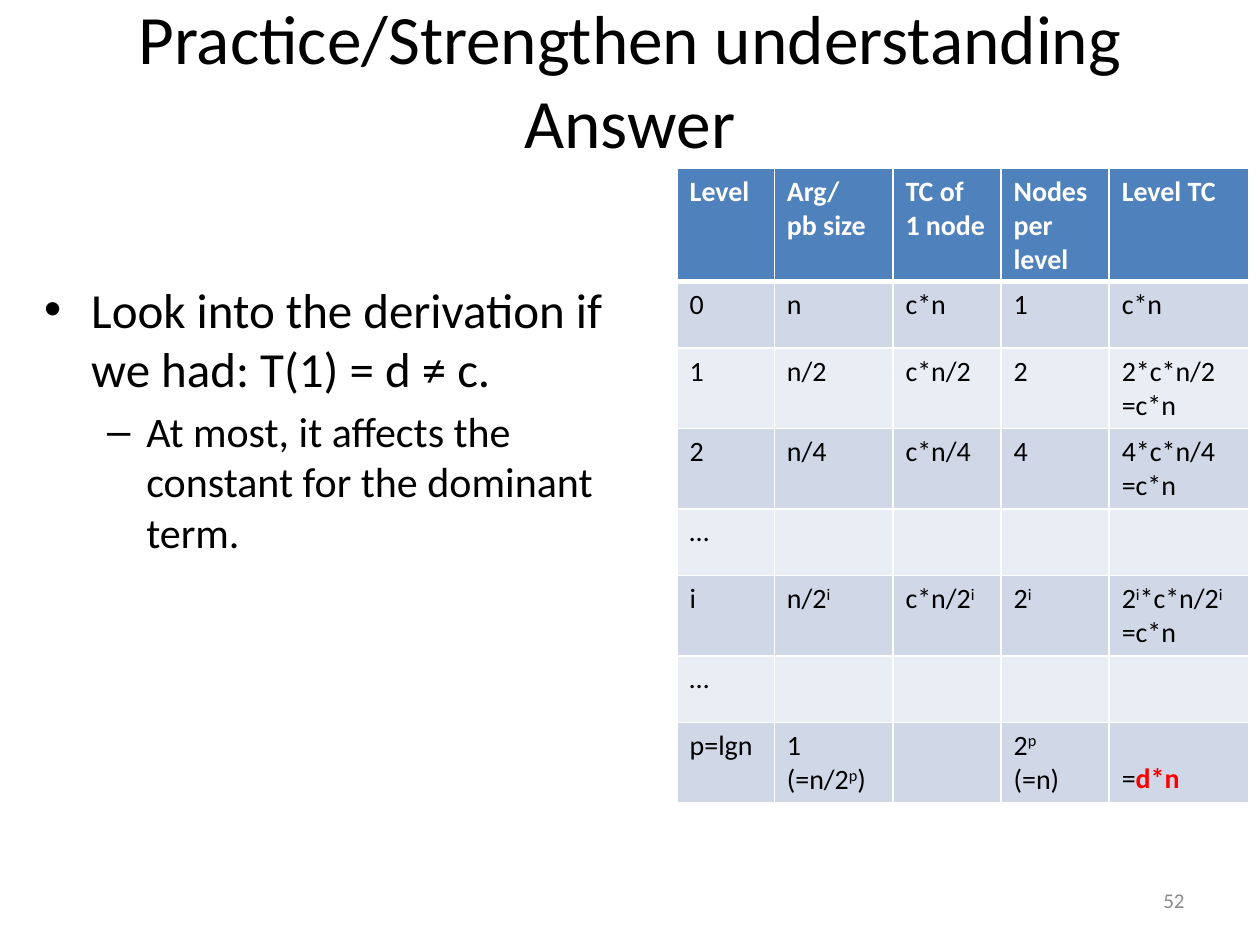
from dataclasses import dataclass
from itertools import cycle

from lxml.etree import SubElement
from pptx import Presentation
from pptx.dml.color import RGBColor
from pptx.enum.text import MSO_ANCHOR, PP_ALIGN
from pptx.oxml.ns import qn
from pptx.util import Cm, Pt

FONT = "Calibri"
BLACK, WHITE, RED, GRAY = "000000", "FFFFFF", "FF0000", "8C8C8C"
BLUE, DARK, LIGHT = "4F81BD", "D0D8E8", "E9EDF4"


@dataclass(frozen=True)
class Style:
    size: float
    color: str = BLACK
    bold: bool = False


@dataclass(frozen=True)
class Box:
    left: float
    top: float
    width: float
    height: float
    anchor: MSO_ANCHOR = MSO_ANCHOR.TOP


@dataclass(frozen=True)
class Point:
    text: str
    size: float
    mark: str
    left: float
    hang: float
    gap: float


@dataclass(frozen=True)
class Row:
    height: float
    cells: tuple[str, ...]


HEAD = Style(16, WHITE, True)
BODY = Style(16)
HOT = Style(16, RED, True)

POINTS = (
    Point("Look into the derivation if we had: T(1) = d ≠ c.", 28, "•", 0.95, 0.95, 0),
    Point("At most, it affects the constant for the dominant term.", 24, "–", 2.06, 0.79, 4.8),
)
WIDTHS = (1.96, 2.39, 2.18, 2.18, 2.82)
ROWS = (
    Row(2.29, ("Level", "Arg/\npb size", "TC of\n1 node", "Nodes per level", "Level TC")),
    Row(1.34, ("0", "n", "c*n", "1", "c*n")),
    Row(1.62, ("1", "n/2", "c*n/2", "2", "2*c*n/2\n=c*n")),
    Row(1.62, ("2", "n/4", "c*n/4", "4", "4*c*n/4\n=c*n")),
    Row(1.34, ("…", "", "", "", "")),
    Row(1.62, ("i", "n/2^i^", "c*n/2^i^", "2^i^", "2^i^*c*n/2^i^\n=c*n")),
    Row(1.34, ("…", "", "", "", "")),
    Row(1.62, ("p=lgn", "1\n(=n/2^p^)", "", "2^p^\n(=n)", "=")),
)


def tint(code: str) -> RGBColor:
    return RGBColor.from_string(code)


def add_run(para, text: str, style: Style, raised: bool = False) -> None:
    run = para.add_run()
    run.text = text
    font = run.font
    font.name, font.size, font.bold = FONT, Pt(style.size), style.bold
    font.color.rgb = tint(style.color)
    if raised:
        run._r.get_or_add_rPr().set("baseline", "30000")


def add_box(slide, box: Box):
    shape = slide.shapes.add_textbox(Cm(box.left), Cm(box.top), Cm(box.width), Cm(box.height))
    frame = shape.text_frame
    frame.word_wrap = True
    frame.vertical_anchor = box.anchor
    return frame


def add_point(para, point: Point) -> None:
    para.space_before = Pt(point.gap)
    props = para._p.get_or_add_pPr()
    props.set("marL", str(Cm(point.left)))
    props.set("indent", str(-Cm(point.hang)))
    SubElement(props, qn("a:buFont"), typeface="Arial")
    SubElement(props, qn("a:buChar"), char=point.mark)
    add_run(para, point.text, Style(point.size))


def add_edge(cell, side: str, width: float) -> None:
    line = SubElement(cell._tc.get_or_add_tcPr(), qn(f"a:ln{side}"), w=str(Pt(width)))
    fill = SubElement(line, qn("a:solidFill"))
    SubElement(fill, qn("a:srgbClr"), val=WHITE)


def fill_cell(cell, text: str, style: Style, back: str, edges: dict[str, float]) -> None:
    for side, width in edges.items():
        add_edge(cell, side, width)
    cell.fill.solid()
    cell.fill.fore_color.rgb = tint(back)
    frame = cell.text_frame
    for num, line in enumerate(text.split("\n")):
        para = frame.add_paragraph() if num else frame.paragraphs[0]
        for part, piece in enumerate(line.split("^")):
            if piece:
                add_run(para, piece, style, part % 2 == 1)


def add_grid(slide) -> None:
    total = sum(row.height for row in ROWS)
    grid = slide.shapes.add_table(
        len(ROWS), len(WIDTHS), Cm(13.65), Cm(3.39), Cm(sum(WIDTHS)), Cm(total)
    ).table
    for col, width in zip(grid.columns, WIDTHS):
        col.width = Cm(width)
    bands = cycle((DARK, LIGHT))
    for num, row in enumerate(ROWS):
        grid.rows[num].height = Cm(row.height)
        style, back = (BODY, next(bands)) if num else (HEAD, BLUE)
        edges = {"L": 1, "R": 1, "T": 3 if num == 1 else 1, "B": 1 if num else 3}
        for col, text in enumerate(row.cells):
            fill_cell(grid.cell(num, col), text, style, back, edges)
    last = grid.cell(len(ROWS) - 1, len(WIDTHS) - 1)
    last.vertical_anchor = MSO_ANCHOR.BOTTOM
    add_run(last.text_frame.paragraphs[0], "d*n", HOT)


def main() -> None:
    deck = Presentation()
    deck.slide_width, deck.slide_height = Cm(25.4), Cm(19.05)
    slide = deck.slides.add_slide(deck.slide_layouts[6])

    title = add_box(slide, Box(1.27, 0, 22.86, 3.18, MSO_ANCHOR.MIDDLE)).paragraphs[0]
    title.alignment = PP_ALIGN.CENTER
    add_run(title, "Practice/Strengthen understanding", Style(39.6))
    title.add_line_break()
    add_run(title, "Answer", Style(39.6))

    frame = add_box(slide, Box(0.64, 5.51, 12.5, 6.15))
    for num, point in enumerate(POINTS):
        add_point(frame.add_paragraph() if num else frame.paragraphs[0], point)

    page = add_box(slide, Box(18.2, 17.65, 5.93, 1.01, MSO_ANCHOR.MIDDLE)).paragraphs[0]
    page.alignment = PP_ALIGN.RIGHT
    add_run(page, "52", Style(12, GRAY))

    add_grid(slide)
    deck.save("out.pptx")


if __name__ == "__main__":
    main()
